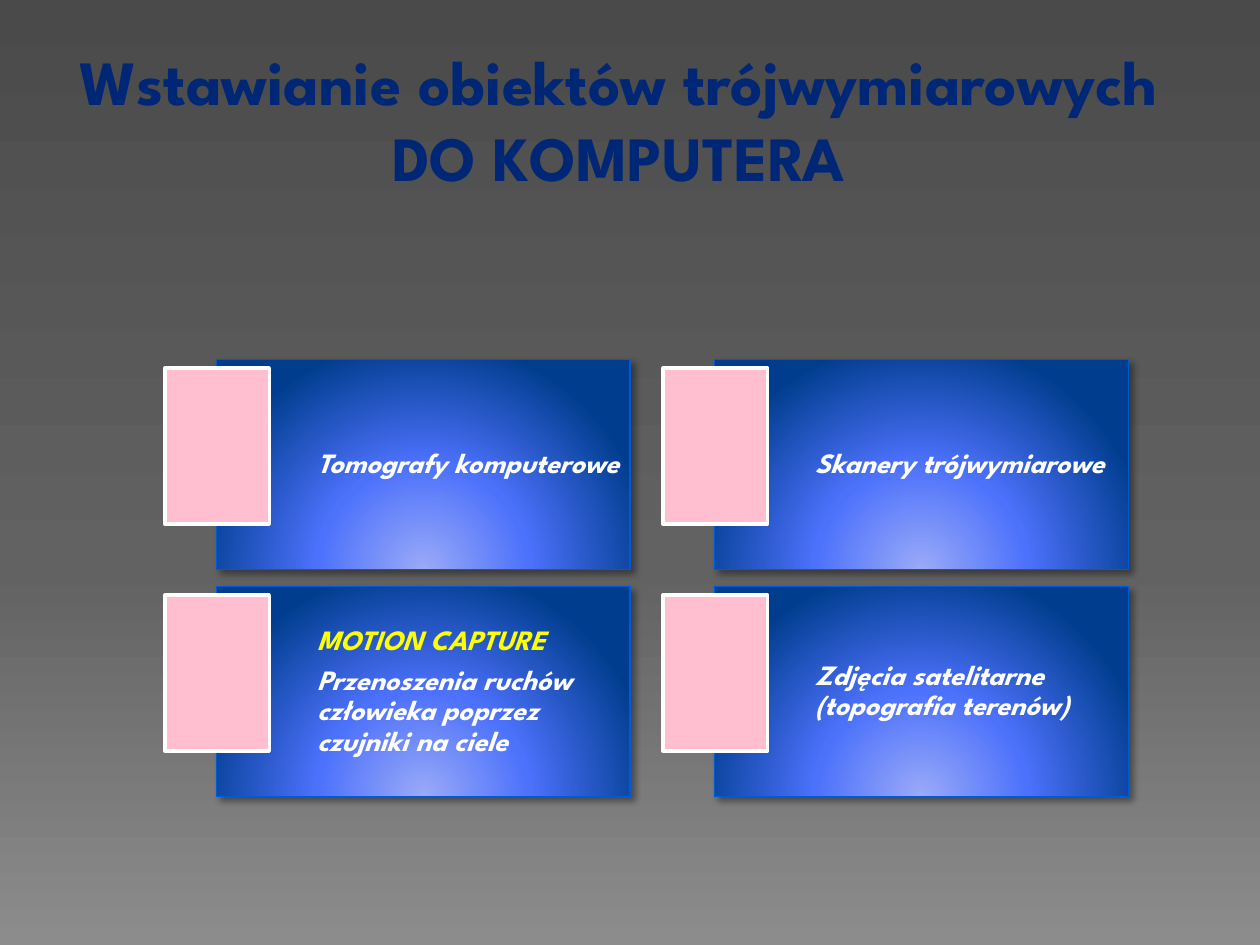
"""Builds a slide with four cards on bringing three-dimensional objects into a computer."""
from dataclasses import dataclass

from lxml import etree
from pptx import Presentation
from pptx.dml.color import RGBColor
from pptx.enum import shapes, text
from pptx.util import Pt

TITLE = ("Wstawianie obiektów trójwymiarowych", "DO KOMPUTERA")
CARDS = (
    {"body": "Tomografy komputerowe"},
    {"body": "Skanery trójwymiarowe"},
    {"heading": "MOTION CAPTURE",
     "body": "Przenoszenia ruchów człowieka poprzez czujniki na ciele"},
    {"body": "Zdjęcia satelitarne (topografia terenów)"},
)


@dataclass(frozen=True)
class Theme:
    font: str = "League Spartan"
    title_size: int = 36
    card_size: int = 16
    title: str = "002776"
    heading: str = "FFFF00"
    body: str = "FFFFFF"
    border: str = "005BD3"
    tile: str = "FFBFD0"
    tile_border: str = "FFFFFF"
    shadow: str = "000000"
    background: tuple = ((0, "4A4A4A"), (60, "626262"), (100, "8C8C8C"))
    card: tuple = ((0, "9AAAF8"), (46, "4C71FB"), (100, "003D8E"))


THEME = Theme()
SLIDE_SIZE = (720, 540)
TITLE_BOX = (3.6, 20.9, 699.8, 94.3)
COLUMNS = 2
CARD_ORIGIN = (123.6, 205.5)
CARD_SIZE = (236.5, 120)
CARD_STEP = (284.6, 129.8)
TILE_OFFSET = (-29.3, 4.7)
TILE_SIZE = (59.6, 89.3)
CARD_INSETS = (57.6, 5, 5, 5)
DRAWING = "http://schemas.openxmlformats.org/drawingml/2006/main"
LINEAR = '<a:lin ang="5400000" scaled="0"/>'
RADIAL = ('<a:path path="circle"><a:fillToRect l="50000" t="155000" '
          'r="50000" b="-55000"/></a:path>')


def color(value):
    return RGBColor.from_string(value)


def apply_gradient(fill, element, stops, direction):
    fill.gradient()
    stop_xml = "".join(
        f'<a:gs pos="{position * 1000}"><a:srgbClr val="{value}"/></a:gs>'
        for position, value in stops)
    gradient = etree.fromstring(
        f'<a:gradFill xmlns:a="{DRAWING}" rotWithShape="1">'
        f'<a:gsLst>{stop_xml}</a:gsLst>{direction}</a:gradFill>')
    default = element.xpath(".//a:gradFill")[0]
    default.getparent().replace(default, gradient)


def add_shadow(shape):
    effects = shape.element.xpath(".//p:spPr/a:effectLst")[0]
    effects.append(etree.fromstring(
        f'<a:outerShdw xmlns:a="{DRAWING}" blurRad="{Pt(4)}" dist="{Pt(3)}" '
        f'dir="2700000" algn="tl" rotWithShape="0"><a:srgbClr val="{THEME.shadow}">'
        '<a:alpha val="40000"/></a:srgbClr></a:outerShdw>'))


def format_runs(paragraph, size, value, italic=False):
    for run in paragraph.runs:
        run.font.name = THEME.font
        run.font.size = Pt(size)
        run.font.bold = True
        run.font.italic = italic
        run.font.color.rgb = color(value)


def add_title(slide):
    title = slide.shapes.title
    title.left, title.top, title.width, title.height = map(Pt, TITLE_BOX)
    frame = title.text_frame
    frame.text = "\n".join(TITLE)
    frame.word_wrap = False
    frame.auto_size = text.MSO_AUTO_SIZE.SHAPE_TO_FIT_TEXT
    frame.vertical_anchor = text.MSO_ANCHOR.TOP
    for paragraph in frame.paragraphs:
        paragraph.alignment = text.PP_ALIGN.CENTER
        paragraph.space_before = Pt(0)
        format_runs(paragraph, THEME.title_size, THEME.title)


def add_rectangle(slide, origin, size, border, border_width):
    shape = slide.shapes.add_shape(
        shapes.MSO_SHAPE.RECTANGLE, *map(Pt, (*origin, *size)))
    shape.shadow.inherit = False
    shape.line.color.rgb = color(border)
    shape.line.width = Pt(border_width)
    return shape


def write_card(frame, content):
    frame.word_wrap = True
    frame.vertical_anchor = text.MSO_ANCHOR.MIDDLE
    (frame.margin_left, frame.margin_top,
     frame.margin_right, frame.margin_bottom) = map(Pt, CARD_INSETS)
    frame.text = "\n".join(content.values())
    for role, paragraph in zip(content, frame.paragraphs):
        paragraph.alignment = text.PP_ALIGN.LEFT
        paragraph.line_spacing = 0.9
        paragraph.space_after = Pt(0.35 * THEME.card_size)
        format_runs(paragraph, THEME.card_size, getattr(THEME, role), italic=True)


def add_card(slide, index, content):
    row, column = divmod(index, COLUMNS)
    left = CARD_ORIGIN[0] + column * CARD_STEP[0]
    top = CARD_ORIGIN[1] + row * CARD_STEP[1]
    card = add_rectangle(slide, (left, top), CARD_SIZE, THEME.border, 0.75)
    apply_gradient(card.fill, card.element, THEME.card, RADIAL)
    add_shadow(card)
    write_card(card.text_frame, content)
    tile_origin = (left + TILE_OFFSET[0], top + TILE_OFFSET[1])
    tile = add_rectangle(slide, tile_origin, TILE_SIZE, THEME.tile_border, 2)
    tile.fill.solid()
    tile.fill.fore_color.rgb = color(THEME.tile)


def main():
    presentation = Presentation()
    presentation.slide_width, presentation.slide_height = map(Pt, SLIDE_SIZE)
    slide = presentation.slides.add_slide(
        presentation.slide_layouts.get_by_name("Title Only"))
    apply_gradient(slide.background.fill, slide.element, THEME.background, LINEAR)
    add_title(slide)
    for index, content in enumerate(CARDS):
        add_card(slide, index, content)
    presentation.save("out.pptx")


if __name__ == "__main__":
    main()
